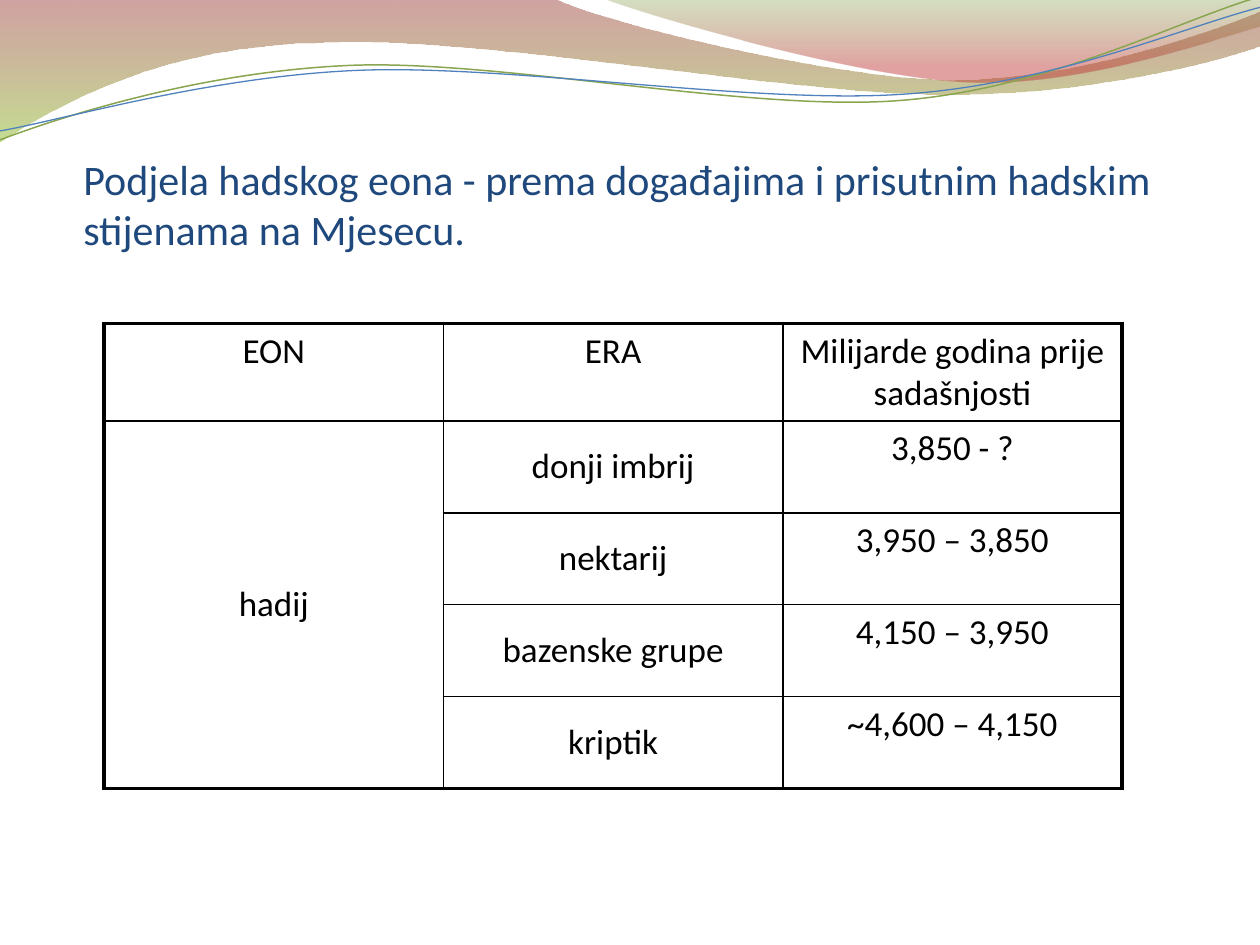
from lxml import etree
from pptx import Presentation
from pptx.dml.color import RGBColor
from pptx.enum.text import MSO_ANCHOR, PP_ALIGN
from pptx.oxml.ns import qn
from pptx.util import Cm, Pt

TOP, MIDDLE, BOTTOM = MSO_ANCHOR.TOP, MSO_ANCHOR.MIDDLE, MSO_ANCHOR.BOTTOM
LEFT, CENTER = PP_ALIGN.LEFT, PP_ALIGN.CENTER

BLACK = RGBColor(0x00, 0x00, 0x00)
NAVY = RGBColor(0x1F, 0x49, 0x7D)
BLUE = RGBColor(0x4F, 0x81, 0xBD)
GREEN = RGBColor(0x89, 0xA5, 0x4F)
DARK_RED = RGBColor(0x97, 0x33, 0x30)
RED = RGBColor(0xBE, 0x33, 0x30)
LIME = RGBColor(0x95, 0xC2, 0x38)
OLIVE = RGBColor(0x76, 0x95, 0x37)

# Outlines in cm: a 2-tuple is a straight step, a 6-tuple a Bézier step.
WIDE_WAVE = [(0, -0.03), (11.18, -0.03),
             (12.09, 0.43, 16.87, 1.6, 19.25, 1.6),
             (21.67, 1.6, 24.33, 0.66, 25.4, 0.23), (25.43, 0.91),
             (24.97, 1.12, 22.1, 1.93, 18.95, 1.9),
             (15.8, 1.9, 9.7, 0.71, 6.53, 0.86),
             (3.28, 0.89, 1.17, 2.11, -0.03, 2.87)]
RIGHT_WAVE = [(12.17, -0.03),
              (12.93, 0.28, 17.32, 1.57, 19.53, 1.65),
              (21.74, 1.75, 24.41, 0.81, 25.4, 0.53), (25.4, 0)]
GREEN_CURVE = [(0, 2.82),
               (1.22, 2.36, 4.01, 1.45, 7.04, 1.32),
               (10.03, 1.19, 15.06, 2.26, 18.11, 2.03),
               (21.16, 1.8, 23.83, 0.38, 25.35, -0.05)]
BLUE_CURVE = [(0, 2.64),
              (1.19, 2.44, 4.17, 1.55, 7.19, 1.42),
              (10.24, 1.29, 15.16, 2.11, 18.21, 1.9),
              (21.23, 1.7, 23.9, 0.53, 25.4, 0.15)]

ROWS = [("EON", "ERA", "Milijarde godina prije sadašnjosti"),
        ("hadij", "donji imbrij", "3,850 - ?"),
        ("", "nektarij", "3,950 – 3,850"),
        ("", "bazenske grupe", "4,150 – 3,950"),
        ("", "kriptik", "~4,600 – 4,150")]


def write(tf, text, size=20, color=BLACK, align=LEFT, font="Calibri"):
    p = tf.paragraphs[0]
    p.alignment = align
    r = p.add_run()
    r.text = text
    r.font.size, r.font.name = Pt(size), font
    r.font.color.rgb = color


def bend(sp, steps):
    """Turn the straight segments of a freeform into its Bézier steps."""
    segments = list(sp._element.spPr.iter(qn("a:lnTo")))
    for segment, step in zip(segments, steps[1:]):
        if len(step) == 2:
            continue
        segment.tag = qn("a:cubicBezTo")
        end = segment[0]
        for x, y in (step[0:2], step[2:4]):
            pt = etree.Element(qn("a:pt"), x=str(Cm(x) - sp.left), y=str(Cm(y) - sp.top))
            end.addprevious(pt)


def set_borders(cell, **widths):
    """Draw black cell borders; keys are L, R, T, B and values are points."""
    tc_pr = cell._tc.get_or_add_tcPr()
    for side, width in widths.items():
        ln = etree.SubElement(tc_pr, qn(f"a:ln{side}"), w=str(Pt(width)))
        fill = etree.SubElement(ln, qn("a:solidFill"))
        etree.SubElement(fill, qn("a:srgbClr"), val=str(BLACK))


class SlideBuilder:
    outer_line = 2.25
    inner_line = 1

    def __init__(self, slide):
        self.slide = slide

    def outline(self, steps, close):
        (x, y), *rest = [(Cm(step[-2]), Cm(step[-1])) for step in steps]
        builder = self.slide.shapes.build_freeform(x, y)
        builder.add_line_segments(rest, close=close)
        sp = builder.convert_to_shape()
        bend(sp, steps)
        sp.shadow.inherit = False
        return sp

    def wave(self, steps, stops):
        """Add a filled wave; stops are (position, colour, opacity %)."""
        sp = self.outline(steps, close=True)
        sp.line.fill.background()
        sp.fill.gradient()
        sp.fill.gradient_angle = 270
        for stop, (position, color, _) in zip(sp.fill.gradient_stops, stops):
            stop.position = position
            stop.color.rgb = color
        for clr, (_, _, opacity) in zip(sp._element.spPr.iter(qn("a:srgbClr")), stops):
            etree.SubElement(clr, qn("a:alpha"), val=str(opacity * 1000))

    def curve(self, steps, color, width):
        sp = self.outline(steps, close=False)
        sp.fill.background()
        sp.line.color.rgb = color
        sp.line.width = Pt(width)

    def title(self, text, x, y, w, h):
        tf = self.slide.shapes.add_textbox(Cm(x), Cm(y), Cm(w), Cm(h)).text_frame
        tf.word_wrap = True
        tf.vertical_anchor = BOTTOM
        tf.margin_left = tf.margin_right = tf.margin_bottom = 0
        write(tf, text, size=24, color=NAVY)

    def table(self, rows, x, y, col_width, row_heights):
        last_row, last_col = len(rows) - 1, len(rows[0]) - 1
        table = self.slide.shapes.add_table(
            len(rows), len(rows[0]), Cm(x), Cm(y),
            Cm(col_width * len(rows[0])), Cm(sum(row_heights))).table
        table.first_row = table.horz_banding = False
        for col in table.columns:
            col.width = Cm(col_width)
        for row, height in zip(table.rows, row_heights):
            row.height = Cm(height)
        table.cell(1, 0).merge(table.cell(last_row, 0))
        for i, texts in enumerate(rows):
            for j, text in enumerate(texts):
                cell = table.cell(i, j)
                edges = {"L": j == 0, "R": j == last_col, "T": i == 0,
                         "B": i == last_row or cell.is_merge_origin}
                set_borders(cell, **{side: self.outer_line if outer else self.inner_line
                                     for side, outer in edges.items()})
                cell.fill.background()
                cell.vertical_anchor = MIDDLE if i > 0 and j < last_col else TOP
                if text:
                    write(cell.text_frame, text, align=CENTER)


def main():
    prs = Presentation()
    prs.slide_width, prs.slide_height = Cm(25.4), Cm(19.05)
    s = SlideBuilder(prs.slides.add_slide(prs.slide_layouts[6]))

    s.wave(WIDE_WAVE, [(0, DARK_RED, 45), (1, LIME, 55)])
    s.wave(RIGHT_WAVE, [(0, OLIVE, 30), (0.8, RED, 45)])
    s.curve(GREEN_CURVE, GREEN, 0.85)
    s.curve(BLUE_CURVE, BLUE, 0.75)
    s.title("Podjela hadskog eona - prema događajima i prisutnim hadskim "
            "stijenama na Mjesecu.", 1.68, 1.74, 22.23, 3.38)
    s.table(ROWS, 2.1, 6.52, 6.84, [1.97] + [1.85] * 4)

    prs.save("out.pptx")


if __name__ == "__main__":
    main()
